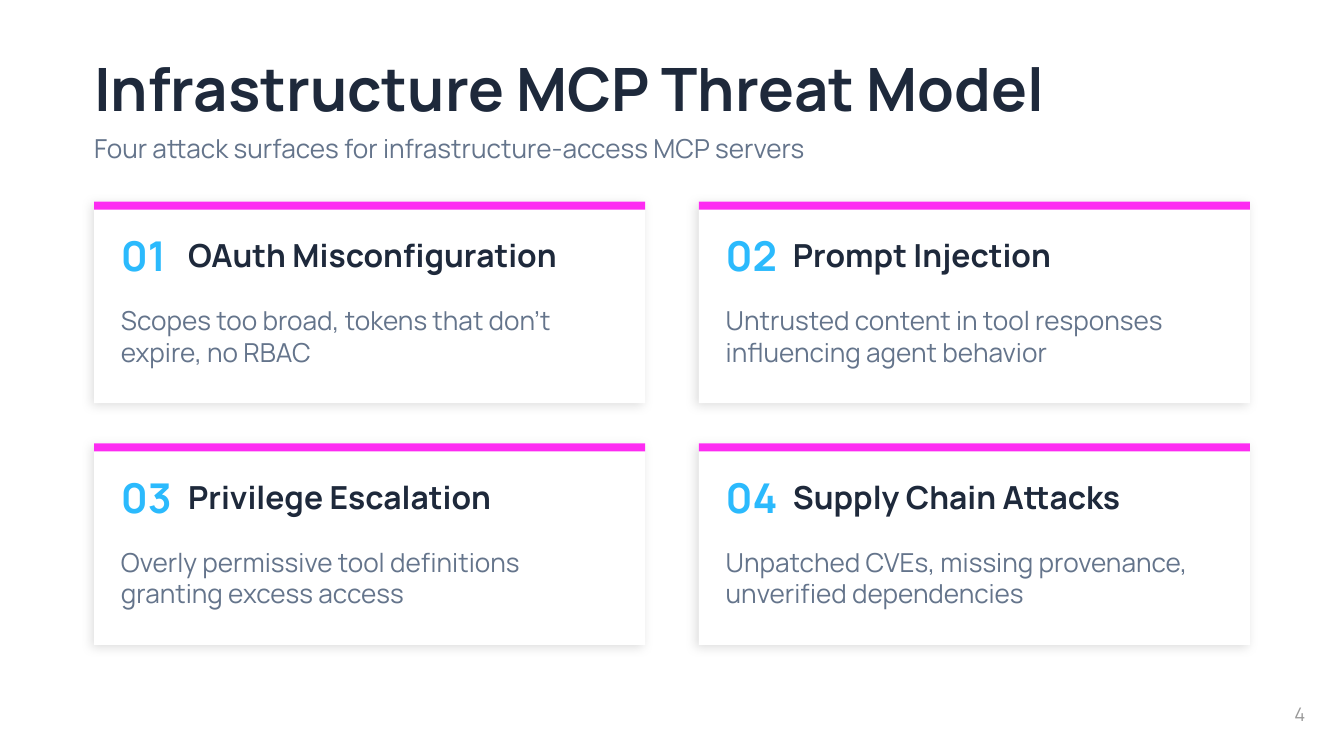
from lxml.etree import SubElement
from pptx import Presentation
from pptx.dml.color import RGBColor
from pptx.enum.shapes import MSO_SHAPE
from pptx.enum.text import MSO_ANCHOR, PP_ALIGN
from pptx.oxml.ns import qn
from pptx.util import Inches, Pt

FONT = "Manrope"
DARK, GRAY, BLUE, PINK = "1E293B", "64748B", "2BBAFD", "FD2BF2"
CARDS = [
    ("OAuth Misconfiguration", "Scopes too broad, tokens that don't expire, no RBAC"),
    ("Prompt Injection", "Untrusted content in tool responses influencing agent behavior"),
    ("Privilege Escalation", "Overly permissive tool definitions granting excess access"),
    ("Supply Chain Attacks", "Unpatched CVEs, missing provenance, unverified dependencies"),
]


def paint(target, color):
    """Give a fill a solid colour from a hex string."""
    target.solid()
    target.fore_color.rgb = RGBColor.from_string(color)


def add_text(slide, text, box, size, color, bold=False, align=PP_ALIGN.LEFT, inset=0):
    """Add a wrapped, vertically centred line of text."""
    frame = slide.shapes.add_textbox(*map(Inches, box)).text_frame
    frame.word_wrap = True
    frame.vertical_anchor = MSO_ANCHOR.MIDDLE
    frame.margin_left = frame.margin_right = Inches(inset)
    frame.margin_top = frame.margin_bottom = Inches(inset)
    line = frame.paragraphs[0]
    line.text = text
    line.alignment = align
    line.font.name = FONT
    line.font.size = Pt(size)
    line.font.bold = bold
    paint(line.font.fill, color)


def add_rect(slide, box, color):
    """Add a flat rectangle without an outline."""
    rect = slide.shapes.add_shape(MSO_SHAPE.RECTANGLE, *map(Inches, box))
    rect.shadow.inherit = False
    paint(rect.fill, color)
    rect.line.fill.background()
    return rect


def add_shadow(shape):
    """Cast a soft, faint black shadow to the lower left."""
    effects = shape._element.spPr.find(qn("a:effectLst"))
    shadow = SubElement(effects, qn("a:outerShdw"), blurRad=str(Pt(6)), dist=str(Pt(2)),
                        dir=str(135 * 60000), algn="bl", rotWithShape="0")
    color = SubElement(shadow, qn("a:srgbClr"), val="000000")
    SubElement(color, qn("a:alpha"), val="12000")


def add_card(slide, left, top, number, title, body):
    """Add a numbered card with a coloured top edge."""
    add_shadow(add_rect(slide, (left, top, 4.1, 1.5), "FFFFFF"))
    add_rect(slide, (left, top, 4.1, 0.06), PINK)
    add_text(slide, f"{number:02}", (left + 0.2, top + 0.2, 0.5, 0.4), 22, BLUE, True)
    add_text(slide, title, (left + 0.7, top + 0.2, 3.1, 0.4), 17, DARK, True)
    add_text(slide, body, (left + 0.2, top + 0.7, 3.7, 0.6), 14, GRAY)


def main():
    """Build the threat model slide and save it."""
    deck = Presentation()
    deck.slide_width, deck.slide_height = Inches(10), Inches(10 * 9 / 16)
    slide = deck.slides.add_slide(deck.slide_layouts[6])
    paint(slide.background.fill, "FFFFFF")
    add_text(slide, "4", (9.21, 5.1, 0.6, 0.43), 10, "999999",
             align=PP_ALIGN.RIGHT, inset=0.1)
    add_text(slide, "Infrastructure MCP Threat Model", (0.7, 0.3, 8, 0.7), 32, DARK, True)
    add_text(slide, "Four attack surfaces for infrastructure-access MCP servers",
             (0.7, 0.9, 8, 0.4), 14, GRAY)
    for index, (title, body) in enumerate(CARDS):
        row, col = divmod(index, 2)
        add_card(slide, 0.7 + 4.5 * col, 1.5 + 1.8 * row, index + 1, title, body)
    deck.save("out.pptx")


if __name__ == "__main__":
    main()
